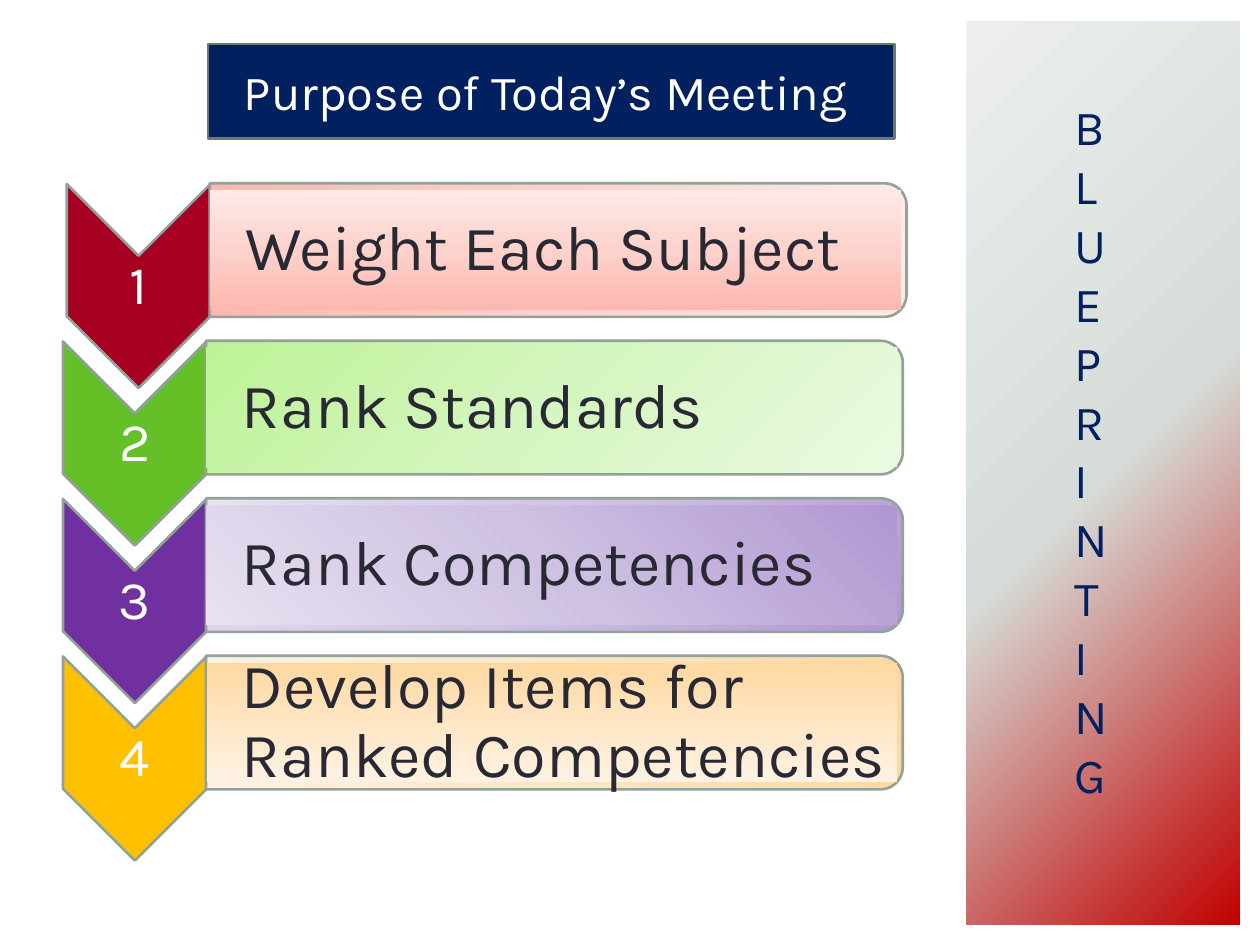
from lxml import etree
from pptx import Presentation
from pptx.dml.color import RGBColor
from pptx.enum.shapes import MSO_SHAPE as Geo
from pptx.enum.text import MSO_ANCHOR as Anchor, MSO_AUTO_SIZE as Auto, PP_ALIGN as Align
from pptx.oxml import parse_xml
from pptx.oxml.ns import nsdecls, qn
from pptx.util import Inches, Pt

NAVY = RGBColor(0x00, 0x20, 0x60)
WHITE = RGBColor(0xFF, 0xFF, 0xFF)
INK = RGBColor(0x29, 0x29, 0x34)
EDGE = RGBColor(0x93, 0xA2, 0x99)
RIM = RGBColor(0x6D, 0x78, 0x71)
RED = RGBColor(0xA5, 0x00, 0x21)
GREEN = RGBColor(0x65, 0xBF, 0x27)
PURPLE = RGBColor(0x70, 0x30, 0xA0)
GOLD = RGBColor(0xFF, 0xC0, 0x00)


def shade(shape, hues, way):
    """Fill with three even stops: way is an angle or a radial focus."""
    stops = "".join(
        f'<a:gs pos="{n * 50000}"><a:srgbClr val="{hue}"/></a:gs>'
        for n, hue in enumerate(hues))
    if isinstance(way, int):
        run = f'<a:lin ang="{way * 60000}" scaled="0"/>'
    else:
        run = f'<a:path path="circle"><a:fillToRect {way}/></a:path>'
    geom = shape._element.spPr.find(qn("a:prstGeom"))
    geom.addnext(parse_xml(
        f'<a:gradFill {nsdecls("a")} rotWithShape="1">'
        f'<a:gsLst>{stops}</a:gsLst>{run}</a:gradFill>'))


def write(shape, text, look, frame):
    """Put one formatted line of text in a shape."""
    body = shape.text_frame
    body.word_wrap = True
    for key, val in frame.items():
        setattr(body, key, val)
    para = body.paragraphs[0]
    para.alignment = look["align"]
    para.line_spacing = look["lead"]
    run = para.add_run()
    run.text = text
    run.font.name = "Karla"
    run.font.size = Pt(look["size"])
    run.font.color.rgb = look["hue"]


prs = Presentation()
prs.slide_width, prs.slide_height = Inches(10), Inches(7.5)
slide = prs.slides.add_slide(prs.slide_layouts[5])

# Side panel
panel = slide.shapes.add_shape(
    Geo.RECTANGLE, Inches(7.67), Inches(0.17), Inches(2.17), Inches(7.17))
panel.shadow.inherit = False
panel.line.fill.background()
shade(panel, ("C00000", "D6DDD9", "EBEEEC"), 'l="100000" t="100000"')

# Stacked word on the panel
word = slide.shapes.add_textbox(
    Inches(8.43), Inches(0.72), Inches(0.72), Inches(6.28))
write(word, "BLUEPRINTING",
      dict(size=28, hue=NAVY, align=Align.LEFT, lead=1.0),
      dict(auto_size=Auto.SHAPE_TO_FIT_TEXT))
word.text_frame._txBody.bodyPr.set("vert", "wordArtVert")

# Steps: text, chevron colour, bar shades, shade direction
STEPS = [
    ("Weight Each Subject", RED, ("FCB8AE", "FDD2CC", "FDE9E6"), 270),
    ("Rank Standards", GREEN, ("BEF297", "D5F6C0", "EAFAE0"),
     'r="100000" b="100000"'),
    ("Rank Competencies", PURPLE, ("B197D2", "CEC1E2", "E7E1F0"), 135),
    ("Develop Items for Ranked Competencies", GOLD,
     ("FFD8A0", "FFE6C5", "FFF2E3"), 90),
]
PITCH = 1.25
DIGIT = dict(size=31, hue=WHITE, align=Align.CENTER, lead=0.9)
LABEL = dict(size=36, hue=INK, align=Align.LEFT, lead=0.9)
TIGHT = dict(vertical_anchor=Anchor.MIDDLE, margin_left=Inches(0.02),
             margin_right=Inches(0.02), margin_top=Inches(0.02),
             margin_bottom=Inches(0.02))
INSET = dict(vertical_anchor=Anchor.MIDDLE, margin_left=Inches(0.28),
             margin_right=Inches(0.03), margin_top=Inches(0.03),
             margin_bottom=Inches(0.03))

for row, (text, hue, hues, way) in enumerate(STEPS):
    x = 0.03 if row == 0 else 0  # the first step sits a little to the right
    y = row * PITCH
    group = slide.shapes.add_group_shape().shapes

    # Turned chevron and bar, both outlined
    arrow = group.add_shape(Geo.CHEVRON, Inches(0.26 + x), Inches(1.7 + y),
                            Inches(1.62), Inches(1.14))
    arrow.fill.solid()
    arrow.fill.fore_color.rgb = hue
    bar = group.add_shape(Geo.ROUND_2_SAME_RECTANGLE, Inches(3.87 + x),
                          Inches(-0.78 + y), Inches(1.06), Inches(5.53))
    shade(bar, hues, way)
    for part in (arrow, bar):
        part.rotation = 90
        part.shadow.inherit = False
        part.line.color.rgb = EDGE
        part.line.width = Pt(1.5)

    # Number and label
    digit = group.add_textbox(Inches(0.5 + x), Inches(2.03 + y),
                              Inches(1.14), Inches(0.49))
    write(digit, str(row + 1), DIGIT, TIGHT)
    label = group.add_shape(Geo.RECTANGLE, Inches(1.64 + x),
                            Inches(1.51 + y), Inches(5.48), Inches(0.95))
    label.shadow.inherit = False
    label.line.fill.background()
    shade(label, hues, way)
    write(label, text, LABEL, INSET)

# Title in a rounded box
title = slide.shapes.title
title.left, title.top = Inches(1.65), Inches(0.35)
title.width, title.height = Inches(5.45), Inches(0.75)
geom = etree.SubElement(title._element.spPr, qn("a:prstGeom"), prst="roundRect")
etree.SubElement(geom, qn("a:avLst"))
title.fill.solid()
title.fill.fore_color.rgb = NAVY
title.line.color.rgb = RIM
title.line.width = Pt(1.5)
write(title, "Purpose of Today’s Meeting ",
      dict(size=28, hue=WHITE, align=Align.CENTER, lead=1.0),
      dict(vertical_anchor=Anchor.MIDDLE, auto_size=Auto.NONE))

prs.save("out.pptx")
